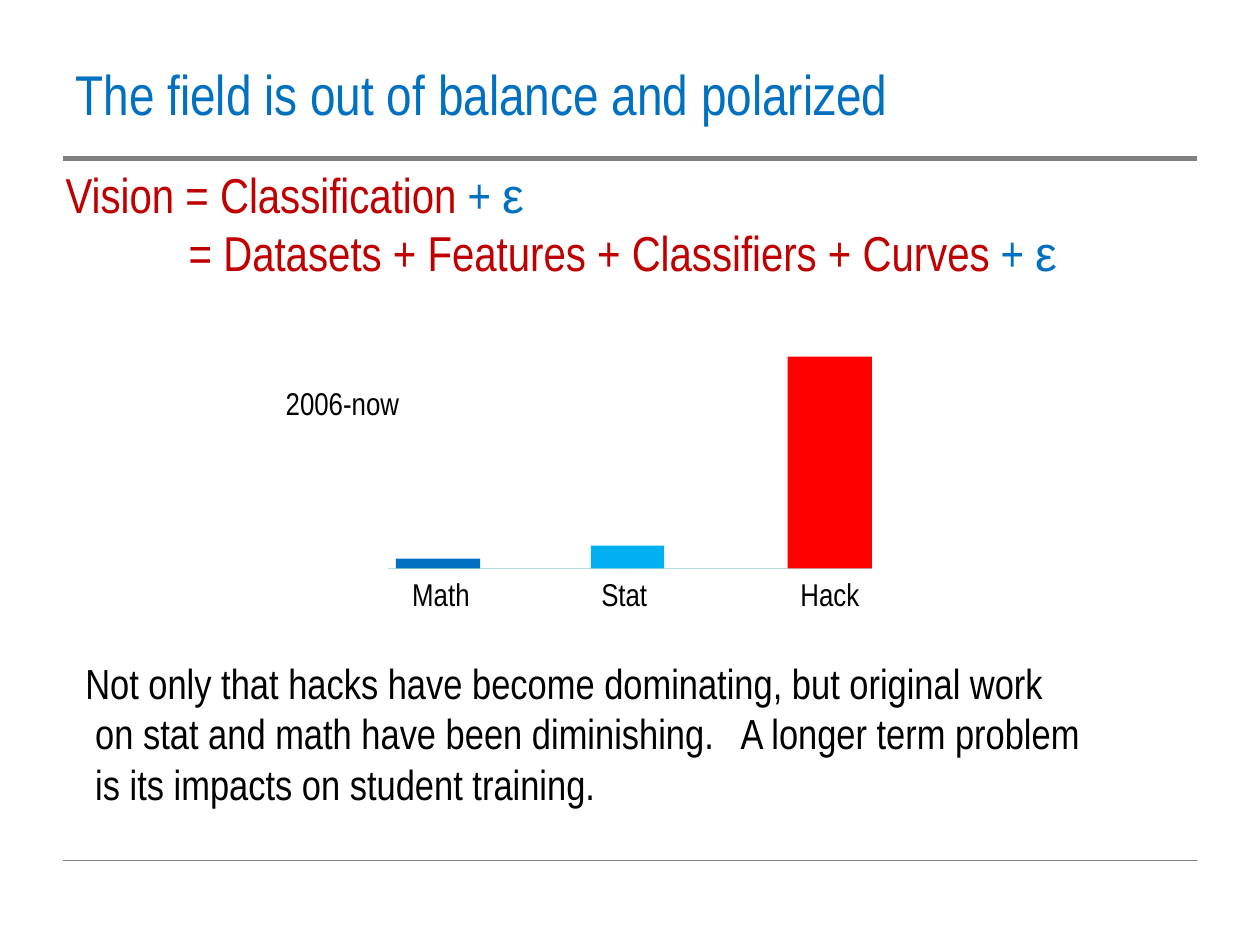
import pptx
import pptx.util
import pptx.dml.color
import pptx.enum.shapes
import pptx.enum.text
import pptx.oxml.ns
import lxml.etree

Cm = pptx.util.Cm
Pt = pptx.util.Pt
Color = pptx.dml.color.RGBColor
Align = pptx.enum.text.PP_ALIGN
qn = pptx.oxml.ns.qn

BLUE = Color(0x00, 0x70, 0xC0)
SKY = Color(0x00, 0xB0, 0xF0)
RED = Color(0xFF, 0x00, 0x00)
WINE = Color(0xC0, 0x00, 0x00)
GRAY = Color(0x80, 0x80, 0x80)
TEAL = Color(0xB6, 0xDC, 0xDF)
BLACK = Color(0x00, 0x00, 0x00)
NARROW = "Arial Narrow"

deck = pptx.Presentation()
deck.slide_width, deck.slide_height = Cm(25.4), Cm(19.05)
slide = deck.slides.add_slide(deck.slide_layouts[1])
shapes = slide.shapes


def write(box, place, lines, size, align=Align.LEFT, wrap=False):
    box.left, box.top, box.width, box.height = [Cm(v) for v in place]
    frame = box.text_frame
    frame.word_wrap = wrap
    frame.auto_size = pptx.enum.text.MSO_AUTO_SIZE.SHAPE_TO_FIT_TEXT
    frame.vertical_anchor = pptx.enum.text.MSO_ANCHOR.TOP
    for num, (inset, parts) in enumerate(lines):
        para = frame.add_paragraph() if num else frame.paragraphs[0]
        para.alignment = align
        para.space_before = Pt(0)
        props = para._p.get_or_add_pPr()
        props.set("marL", str(Cm(inset)))
        props.set("indent", "0")
        lxml.etree.SubElement(props, qn("a:buNone"))
        for text, color, face in parts:
            run = para.add_run()
            run.text = text
            run.font.size = Pt(size)
            run.font.name = face
            run.font.color.rgb = color


def rule(left, right, top, color, width):
    line = shapes.add_connector(
        pptx.enum.shapes.MSO_CONNECTOR.STRAIGHT,
        Cm(left), Cm(top), Cm(right), Cm(top))
    line.line.color.rgb = color
    line.line.width = Pt(width)
    lxml.etree.SubElement(line._element.spPr, qn("a:effectLst"))


rule(1.27, 24.13, 3.2, GRAY, 3)
rule(1.27, 24.13, 17.35, GRAY, 0.75)

title = "The field is out of balance and polarized"
write(shapes.title, (1.27, 1.07, 17.32, 1.63), [(0, [(title, BLUE, NARROW)])], 32)

noise = [("+ ", BLUE, NARROW), ("ε", BLUE, "Arial")]
sums = [
    (0, [("Vision = Classification ", WINE, NARROW)] + noise),
    (2.48, [("= Datasets + Features + Classifiers + Curves ", WINE, NARROW)] + noise),
]
write(slide.placeholders[1], (1.07, 3.18, 23.29, 2.64), sums, 28, wrap=True)

base = 11.46
rule(7.82, 17.58, base, TEAL, 0.75)
bars = [
    ("Math", 7.98, 1.7, 0.2, BLUE, 8.05, 1.68),
    ("Stat", 11.91, 1.48, 0.46, SKY, 11.86, 1.45),
    ("Hack", 15.88, 1.7, 4.27, RED, 15.88, 1.7),
]
for name, left, width, height, color, start, span in bars:
    bar = shapes.add_shape(
        pptx.enum.shapes.MSO_SHAPE.RECTANGLE,
        Cm(left), Cm(base - height), Cm(width), Cm(height))
    bar.shadow.inherit = False
    bar.fill.solid()
    bar.fill.fore_color.rgb = color
    bar.line.fill.background()
    write(shapes.add_textbox(0, 0, 0, 0), (start, base, span, 1.02),
          [(0, [(name, BLACK, NARROW)])], 18, Align.CENTER)

write(shapes.add_textbox(0, 0, 0, 0), (5.51, 7.62, 2.97, 1.02),
      [(0, [("2006-now", BLACK, NARROW)])], 18)

notes = [
    (0, "Not only that hacks have become dominating, but original work"),
    (0.2, "on stat and math have been diminishing.   A longer term problem"),
    (0.2, "is its impacts on student training."),
]
write(shapes.add_textbox(0, 0, 0, 0), (1.47, 13.13, 21.01, 3.33),
      [(inset, [(text, BLACK, NARROW)]) for inset, text in notes], 24)

deck.save("out.pptx")
